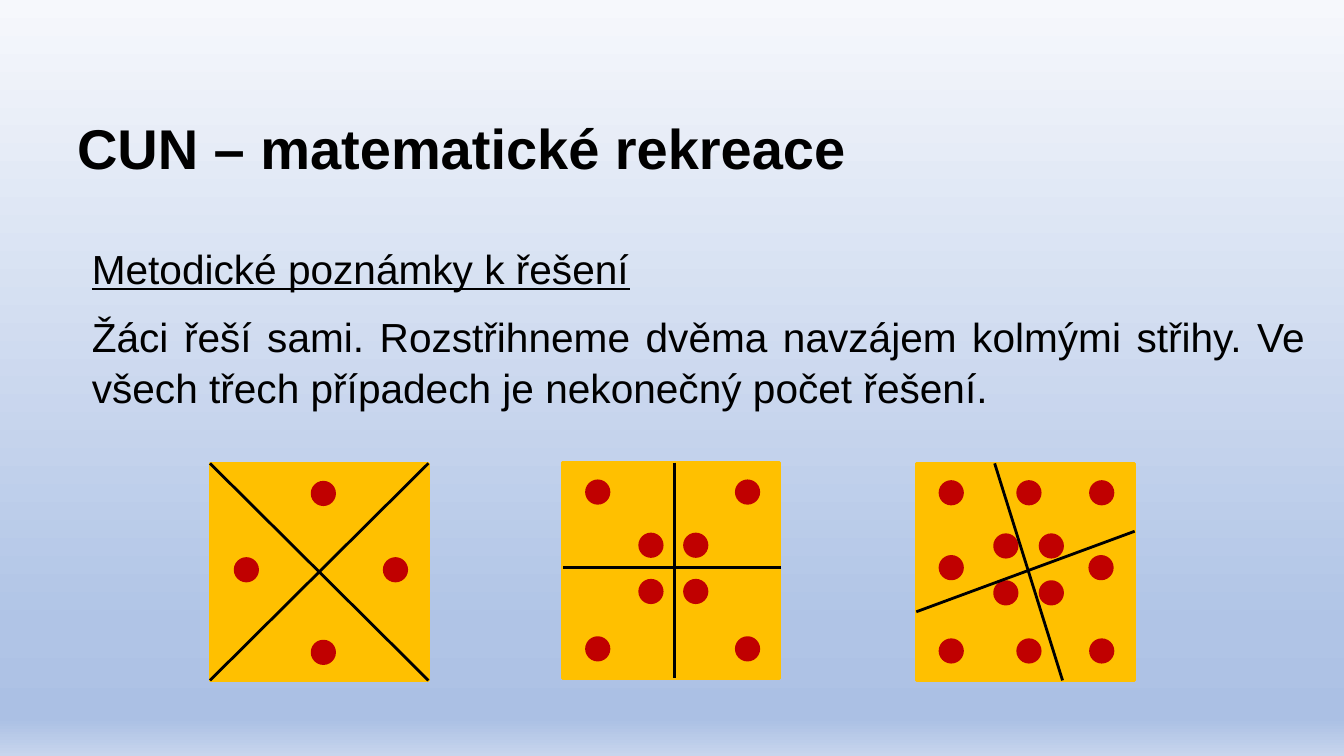
from dataclasses import dataclass
from itertools import product

from lxml.etree import SubElement
from pptx import Presentation
from pptx.dml.color import RGBColor
from pptx.enum.shapes import MSO_CONNECTOR, MSO_SHAPE
from pptx.enum.text import MSO_ANCHOR, PP_ALIGN
from pptx.oxml.ns import qn
from pptx.shapes.shapetree import GroupShapes
from pptx.slide import Slide
from pptx.util import Pt

BLACK = RGBColor(0x00, 0x00, 0x00)
GOLD = RGBColor(0xFF, 0xC0, 0x00)
RED = RGBColor(0xC0, 0x00, 0x00)
BACKGROUND_STOPS = (
    (0, RGBColor(0xF6, 0xF8, 0xFC)),
    (83, RGBColor(0xB0, 0xC4, 0xE6)),
    (95, RGBColor(0xAB, 0xC0, 0xE4)),
    (100, RGBColor(0xC7, 0xD5, 0xED)),
)
FONT = "Arial"
DOT_SIZE = 16
LINE_WIDTH = 2

Point = tuple[float, float]


@dataclass(frozen=True)
class Line:
    text: str
    size: float
    bold: bool = False
    underline: bool = False


@dataclass(frozen=True)
class TextBlock:
    left: float
    top: float
    width: float
    height: float
    anchor: MSO_ANCHOR
    lines: tuple[Line, ...]
    space_after: float = 0
    line_spacing: float = 1.0


@dataclass(frozen=True)
class Board:
    left: float
    top: float
    width: float
    height: float
    dots: tuple[Point, ...]
    cuts: tuple[tuple[Point, Point], ...]


TEXT_BLOCKS = (
    TextBlock(48, 54, 870.5, 78.5, MSO_ANCHOR.BOTTOM,
              (Line("CUN – matematické rekreace", 40, bold=True),)),
    TextBlock(58.5, 169, 882, 357, MSO_ANCHOR.TOP,
              (Line("Metodické poznámky k řešení", 29, underline=True),
               Line("Žáci řeší sami. Rozstřihneme dvěma navzájem kolmými střihy. "
                    "Ve všech třech případech je nekonečný počet řešení.", 29)),
              space_after=12, line_spacing=1.05),
)

BOARDS = (
    Board(150, 331, 156, 155,
          ((73, 127), (18, 68), (73, 13.5), (124.5, 68)),
          (((156, 0), (0, 155)), ((0, 0), (156, 155)))),
    Board(402, 330.5, 155, 154,
          (*product((17, 124), (13, 125)), *product((55, 87), (51, 84))),
          (((80, 0), (80, 154)), ((156, 75), (0, 75)))),
    Board(654.5, 331, 156, 155,
          (*product((17, 72.5, 124.5), (13, 126)), (17, 66.5), (124, 66.5),
           *product((56, 88.5), (51, 84.5))),
          (((156, 48.5), (0, 106)), ((56, 0), (104.5, 155)))),
)


def paint_background(page: Slide) -> None:
    fill = page.background.fill
    fill.gradient()
    fill.gradient_angle = 270
    stop_list = page.background._cSld.find(".//" + qn("a:gsLst"))
    for stop in list(stop_list):
        stop_list.remove(stop)
    for percent, color in BACKGROUND_STOPS:
        stop = SubElement(stop_list, qn("a:gs"), pos=str(percent * 1000))
        SubElement(stop, qn("a:srgbClr"), val=str(color))


def add_text(page: Slide, block: TextBlock) -> None:
    box = page.shapes.add_textbox(Pt(block.left), Pt(block.top), Pt(block.width), Pt(block.height))
    frame = box.text_frame
    frame.word_wrap = True
    frame.vertical_anchor = block.anchor
    for index, line in enumerate(block.lines):
        para = frame.add_paragraph() if index else frame.paragraphs[0]
        para.alignment = PP_ALIGN.JUSTIFY
        para.space_after = Pt(block.space_after)
        para.line_spacing = block.line_spacing
        span = para.add_run()
        span.text = line.text
        span.font.name = FONT
        span.font.size = Pt(line.size)
        span.font.bold = line.bold
        span.font.underline = line.underline
        span.font.color.rgb = BLACK


def add_solid(shapes: GroupShapes, kind: MSO_SHAPE, left: float, top: float,
              width: float, height: float, color: RGBColor) -> None:
    shape = shapes.add_shape(kind, Pt(left), Pt(top), Pt(width), Pt(height))
    shape.shadow.inherit = False
    shape.fill.solid()
    shape.fill.fore_color.rgb = color
    shape.line.color.rgb = color
    shape.line.width = Pt(LINE_WIDTH)


def add_cut(shapes: GroupShapes, board: Board, start: Point, end: Point) -> None:
    cut = shapes.add_connector(
        MSO_CONNECTOR.STRAIGHT,
        Pt(board.left + start[0]), Pt(board.top + start[1]),
        Pt(board.left + end[0]), Pt(board.top + end[1]),
    )
    cut.line.color.rgb = BLACK
    cut.line.width = Pt(LINE_WIDTH)
    SubElement(cut._element.spPr, qn("a:effectLst"))


def add_board(page: Slide, board: Board) -> None:
    shapes = page.shapes.add_group_shape().shapes
    add_solid(shapes, MSO_SHAPE.RECTANGLE, board.left, board.top, board.width, board.height, GOLD)
    for across, down in board.dots:
        add_solid(shapes, MSO_SHAPE.OVAL, board.left + across, board.top + down,
                  DOT_SIZE, DOT_SIZE, RED)
    for start, end in board.cuts:
        add_cut(shapes, board, start, end)


def main() -> None:
    deck = Presentation()
    deck.slide_width = Pt(960)
    deck.slide_height = Pt(540)
    page = deck.slides.add_slide(deck.slide_layouts[6])
    paint_background(page)
    for block in TEXT_BLOCKS:
        add_text(page, block)
    for board in BOARDS:
        add_board(page, board)
    deck.save("out.pptx")


if __name__ == "__main__":
    main()
